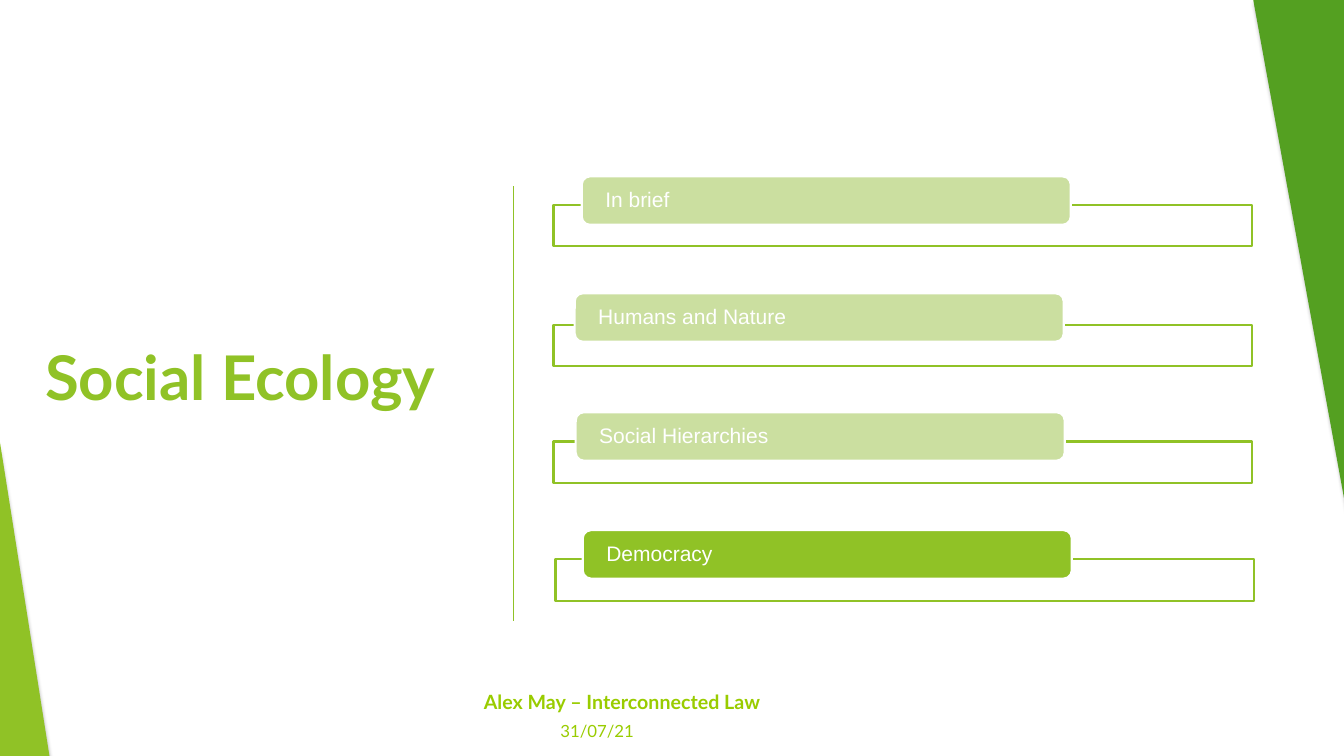
from lxml import etree
from pptx import Presentation
from pptx import util as u
from pptx.dml.color import RGBColor
from pptx.enum import shapes, text
from pptx.oxml.ns import qn

LIME, GREEN, PALE, WHITE = "90C226", "54A021", "CBDFA0", "FFFFFF"
DATE = "99CC00"
KIND = shapes.MSO_SHAPE


def tint(code):
    return RGBColor.from_string(code)


class Deck:
    """Holds the style and the current slide."""

    def __init__(self):
        self.prs = Presentation()
        self.prs.slide_width = u.Inches(13.33)
        self.prs.slide_height = u.Inches(7.5)
        self.slide = self.prs.slides.add_slide(self.prs.slide_layouts[6])

    def shape(self, kind, box, fill, line=None, adj=None):
        item = self.slide.shapes.add_shape(kind, *map(u.Inches, box))
        item.shadow.inherit = False
        item.fill.solid()
        item.fill.fore_color.rgb = tint(fill)
        if line:
            item.line.color.rgb = tint(line)
            item.line.width = u.Pt(1.5)
        else:
            item.line.fill.background()
        if adj is not None:
            item.adjustments[0] = adj
        return item

    def wedge(self, box, fill, turn=0):
        item = self.shape(KIND.ISOSCELES_TRIANGLE, box, fill, adj=0)
        item.rotation = turn
        # Soft shadow straight below
        glow = item._element.spPr.find(qn("a:effectLst"))
        shade = etree.SubElement(glow, qn("a:outerShdw"), blurRad=str(u.Pt(3)),
                                 dist=str(u.Pt(2)), dir="5400000", rotWithShape="0")
        color = etree.SubElement(shade, qn("a:srgbClr"), val="000000")
        etree.SubElement(color, qn("a:alpha"), val="35000")

    def rule(self, x, top, end):
        line = self.slide.shapes.add_connector(
            shapes.MSO_CONNECTOR.STRAIGHT, *map(u.Inches, (x, top, x, end)))
        line.line.color.rgb = tint(LIME)
        line.line.width = u.Pt(0.75)
        etree.SubElement(line._element.spPr, qn("a:effectLst"))

    def letter(self, item, words, size, color, font="Lato", bold=False, mid=False):
        frame = item.text_frame
        frame.word_wrap = True
        if mid:
            frame.vertical_anchor = text.MSO_ANCHOR.MIDDLE
        para = frame.paragraphs[0]
        para.text = words
        para.alignment = text.PP_ALIGN.LEFT
        para.font.name, para.font.size, para.font.bold = font, u.Pt(size), bold
        para.font.color.rgb = tint(color)
        return frame

    def label(self, box, words, size, color, **style):
        item = self.slide.shapes.add_textbox(*map(u.Inches, box))
        self.letter(item, words, size, color, **style)

    def topic(self, words, frame, tab, fill):
        self.shape(KIND.RECTANGLE, (*frame, 6.93, 0.41), WHITE, LIME)
        item = self.shape(KIND.ROUNDED_RECTANGLE, (*tab, 4.85, 0.48), fill, WHITE, 0.167)
        body = self.letter(item, words, 15, WHITE, font="Arial", mid=True)
        body.margin_left, body.margin_right = u.Inches(0.21), u.Inches(0.18)
        body.margin_top = body.margin_bottom = u.Inches(0.02)
        body.paragraphs[0].line_spacing = 0.9


def main():
    deck = Deck()

    # Side wedges and divider
    deck.wedge((0, 4.39, 0.49, 3.11), LIME)
    deck.rule(5.09, 1.85, 6.16)
    deck.wedge((12.43, 0, 0.92, 5.05), GREEN, turn=180)

    # Footer
    deck.label((5.46, 7.1, 3, 0.4), "31/07/21", 12, DATE)
    deck.label((4.7, 6.8, 3.39, 0.4), "Alex May – Interconnected Law", 14, DATE, bold=True)

    # Topics: words, frame corner, tab corner, tab fill
    for row in (
        ("In brief", (5.49, 2.03), (5.77, 1.75), PALE),
        ("Humans and Nature", (5.49, 3.22), (5.7, 2.91), PALE),
        ("Social Hierarchies", (5.49, 4.38), (5.71, 4.09), PALE),
        ("Democracy", (5.51, 5.55), (5.78, 5.26), LIME),
    ):
        deck.topic(*row)

    # Title
    deck.label((0.35, 1.29, 4.72, 4.88), "Social Ecology", 44, LIME, bold=True, mid=True)

    deck.prs.save("out.pptx")


if __name__ == "__main__":
    main()
